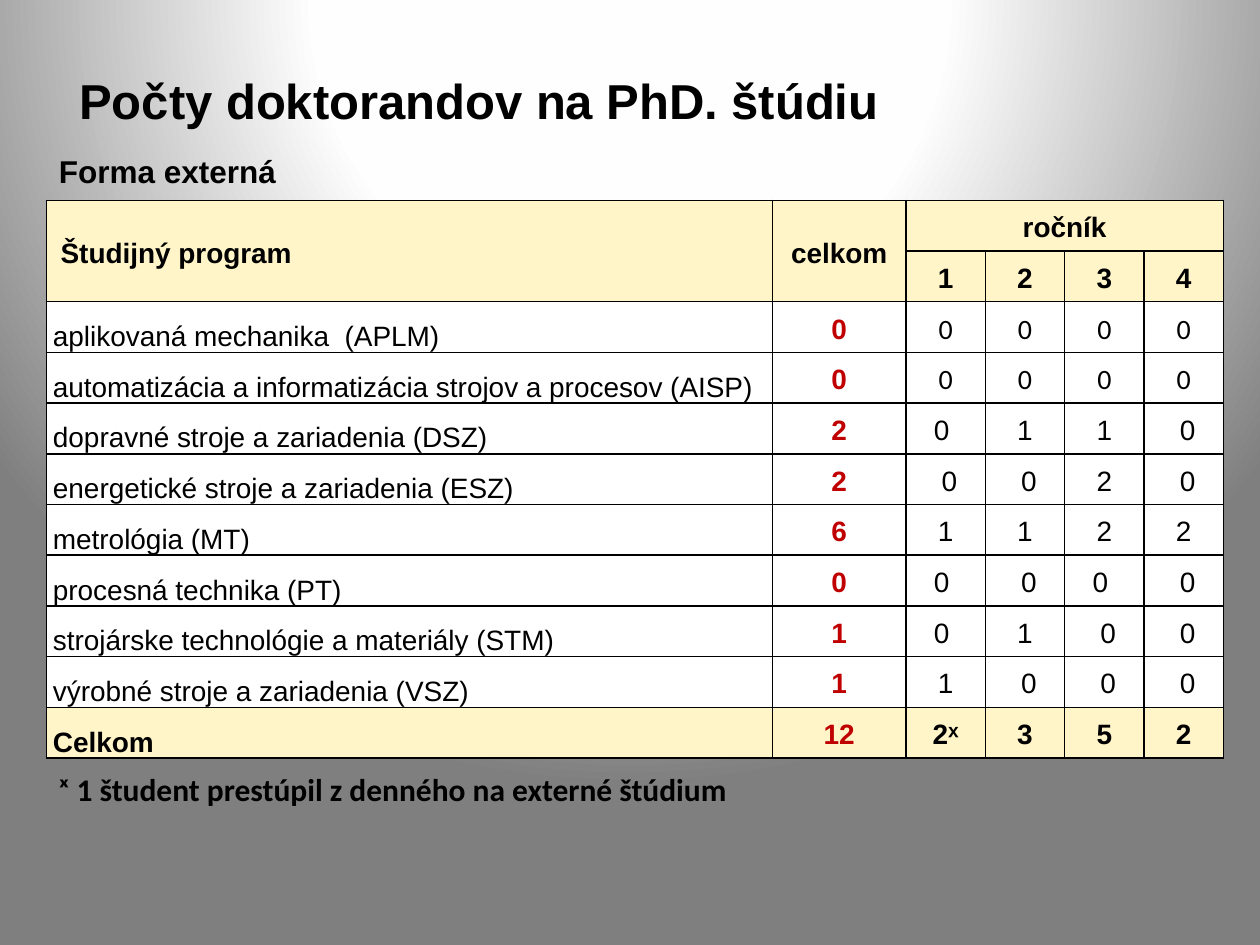
from lxml import etree
from pptx import Presentation
from pptx.dml.color import RGBColor
from pptx.enum.text import MSO_ANCHOR as Anchor, MSO_AUTO_SIZE as Auto, PP_ALIGN as Align
from pptx.oxml import parse_xml
from pptx.oxml.ns import nsdecls, qn
from pptx.util import Inches, Pt

BLACK, RED, WHITE, CREAM = "000000", "C00000", "FFFFFF", "FFF5C8"
STOPS = [(0, "FFFFFF"), (40, "FEFEFE"), (100, "7F7F7F")]
COLS = [5.76, 1.06, 0.63, 0.63, 0.63, 0.63]
ROWS = [
    [" Študijný program", "celkom", "ročník", "", "", ""],
    ["", "", "1", "2", "3", "4"],
    ["aplikovaná mechanika  (APLM)", "0", "0", "0", "0", "0"],
    ["automatizácia a informatizácia strojov a procesov (AISP)", "0", "0", "0", "0", "0"],
    ["dopravné stroje a zariadenia (DSZ)", "2", "0 ", "1", "1", " 0"],
    ["energetické stroje a zariadenia (ESZ)", "2", " 0", " 0", "2", " 0"],
    ["metrológia (MT)", "6", "1", "1", "2", "2"],
    ["procesná technika (PT)", "0", "0 ", " 0", "0 ", " 0"],
    ["strojárske technológie a materiály (STM)", "1", "0 ", "1", " 0", " 0"],
    ["výrobné stroje a zariadenia (VSZ)", "1", "1", " 0", " 0", " 0"],
    ["Celkom", "12", "2ˣ", "3", "5", "2"],
]
HEAD, LAST = 2, len(ROWS) - 1
MERGES = [(0, 0, 1, 0), (0, 1, 1, 1), (0, 2, 0, 5)]


def rgb(code):
    return RGBColor.from_string(code)


def style(para, size, face="Arial", color=BLACK, bold=True):
    for run in para.runs:
        font = run.font
        font.size, font.name, font.bold = Pt(size), face, bold
        font.color.rgb = rgb(color)


def loosen(para):
    para.line_spacing = 1.15
    para.space_after = Pt(10)


def paint_back(slide):
    """Fill the background with a round gradient centred above the middle."""
    stops = "".join(
        f'<a:gs pos="{pos * 1000}"><a:srgbClr val="{code}"/></a:gs>' for pos, code in STOPS)
    back = parse_xml(
        f'<p:bg {nsdecls("p", "a")}><p:bgPr><a:gradFill rotWithShape="1">'
        f'<a:gsLst>{stops}</a:gsLst><a:path path="circle">'
        '<a:fillToRect l="50000" t="-80000" r="50000" b="180000"/></a:path>'
        '</a:gradFill><a:effectLst/></p:bgPr></p:bg>')
    slide.element.cSld.insert(0, back)


def add_text(slide, box, text, size, face="Arial"):
    shape = slide.shapes.add_textbox(*map(Inches, box))
    frame = shape.text_frame
    frame.word_wrap = True
    frame.text = text
    style(frame.paragraphs[0], size, face)
    return frame


def add_title(slide, box):
    frame = add_text(slide, box, "Počty doktorandov na PhD. štúdiu", 28)
    frame.vertical_anchor = Anchor.MIDDLE
    frame.margin_left = 0


def add_label(slide, box):
    add_text(slide, box, "Forma externá", 18).auto_size = Auto.SHAPE_TO_FIT_TEXT


def add_note(slide, box):
    text = "ˣ 1 študent prestúpil z denného na externé štúdium"
    frame = add_text(slide, box, text, 18, "Calibri")
    frame.auto_size = Auto.SHAPE_TO_FIT_TEXT
    loosen(frame.paragraphs[0])


def add_edges(cell):
    props = cell._tc.get_or_add_tcPr()
    for i, side in enumerate(("lnL", "lnR", "lnT", "lnB")):
        line = etree.Element(qn(f"a:{side}"), w=str(Pt(1)))
        fill = etree.SubElement(line, qn("a:solidFill"))
        etree.SubElement(fill, qn("a:srgbClr"), val=BLACK)
        props.insert(i, line)


def fill_cell(cell, row, col, text):
    body = HEAD <= row < LAST
    cell.fill.solid()
    cell.fill.fore_color.rgb = rgb(WHITE if body else CREAM)
    add_edges(cell)
    cell.margin_left = cell.margin_right = Inches(0.05)
    cell.margin_top = cell.margin_bottom = 0
    low = col == 0 and row >= HEAD
    cell.vertical_anchor = Anchor.BOTTOM if low else Anchor.MIDDLE
    cell.text_frame.text = text
    para = cell.text_frame.paragraphs[0]
    para.alignment = Align.LEFT if col == 0 else Align.CENTER
    loosen(para)
    total = col == 1 and row >= HEAD
    face = "Calibri" if row in (2, 3) and col > 1 else "Arial"
    style(para, 16, face, RED if total else BLACK, total or not body)


def add_counts(slide, box):
    frame = slide.shapes.add_table(len(ROWS), len(COLS), *map(Inches, box))
    table = frame.table
    table.first_row = table.horz_banding = False
    for col, width in zip(table.columns, COLS):
        col.width = Inches(width)
    for row in table.rows:
        row.height = Inches(box[3] / len(ROWS))
    for r, texts in enumerate(ROWS):
        for c, text in enumerate(texts):
            fill_cell(table.cell(r, c), r, c, text)
    for top, left, end, right in MERGES:
        table.cell(top, left).merge(table.cell(end, right))


def main():
    deck = Presentation()
    deck.slide_width, deck.slide_height = Inches(10), Inches(7.5)
    slide = deck.slides.add_slide(deck.slide_layouts[6])
    paint_back(slide)
    add_title(slide, (0.63, 0.3, 8.87, 0.99))
    add_counts(slide, (0.37, 1.59, 9.32, 4.43))
    add_label(slide, (0.37, 1.16, 5, 0.4))
    add_note(slide, (0.37, 6.02, 6.3, 0.43))
    deck.save("out.pptx")


if __name__ == "__main__":
    main()
